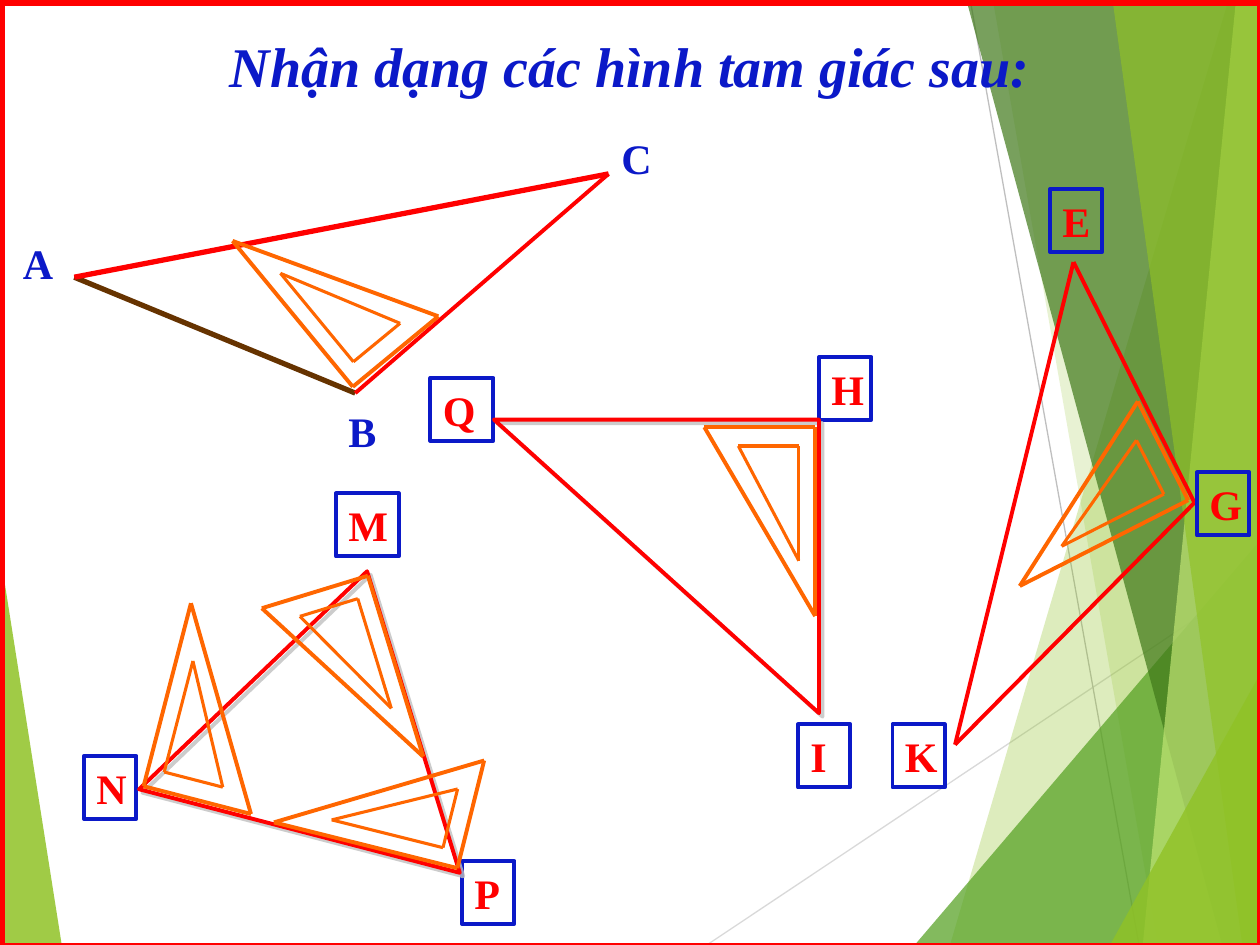
from math import cos, radians, sin

from lxml.etree import SubElement
from pptx import Presentation
from pptx.dml.color import RGBColor
from pptx.enum.shapes import MSO_CONNECTOR, MSO_SHAPE
from pptx.enum.text import MSO_ANCHOR, PP_ALIGN
from pptx.oxml.ns import qn
from pptx.util import Inches, Pt

W, H = 10, 7.5
CELL = 1 / 12  # labels sit on a grid of 120 columns by 90 rows
BLUE, RED, ORANGE, BROWN = "0B19C8", "FF0000", "FF6600", "663300"

# Polygon, colour, opacity in percent
LEFT_FACET = ([(0, 4.39), (0.49, H), (0, H)], "90C226", 85)
RIGHT_FACETS = [
    ([(9.75, 0), (7.54, H), (W, H), (W, 0)], "90C226", 30),
    ([(7.88, 0), (9.19, H), (W, H), (W, 0)], "90C226", 20),
    ([(7.26, H), (W, 4.29), (W, H)], "54A021", 72),
    ([(7.67, 0), (9.7, H), (W, H), (W, 0)], "3F7819", 70),
    ([(9.81, 0), (9.07, H), (W, H), (W, 0)], "C0E474", 70),
    ([(8.83, 0), (9.86, H), (W, H), (9.98, 0)], "90C226", 65),
    ([(8.81, H), (W, 5.35), (W, H)], "90C226", 80),
]


def rgb(color):
    return RGBColor.from_string(color)


def lengths(values):
    return [Inches(v) for v in values]


def set_line(s, color, width):
    s.line.color.rgb = rgb(color)
    s.line.width = Pt(width)


def add_line(shapes, start, end, color, width):
    s = shapes.add_connector(MSO_CONNECTOR.STRAIGHT, *lengths(start + end))
    set_line(s, color, width)
    SubElement(s._element.spPr, qn("a:effectLst"))


def add_facet(shapes, points, color, opacity):
    corners = [lengths(point) for point in points]
    builder = shapes.build_freeform(*corners[0])
    builder.add_line_segments(corners[1:], close=True)
    s = builder.convert_to_shape()
    s.shadow.inherit = False
    s.fill.solid()
    s.fill.fore_color.rgb = rgb(color)
    s.line.fill.background()
    clr = s._element.spPr.find(qn("a:solidFill"))[0]
    SubElement(clr, qn("a:alpha"), val=str(opacity * 1000))


def add_outline(shapes, kind, box, color, width, rotation=0):
    s = shapes.add_shape(kind, *lengths(box))
    s.shadow.inherit = False
    s.fill.background()
    set_line(s, color, width)
    s.rotation = rotation
    return s


def add_gray_shadow(s):
    effects = s._element.spPr.find(qn("a:effectLst"))
    shadow = SubElement(effects, qn("a:outerShdw"), dist=str(Pt(2.8)),
                        dir="2700000", algn="ctr", rotWithShape="0")
    clr = SubElement(shadow, qn("a:srgbClr"), val="C0C0C0")
    SubElement(clr, qn("a:alpha"), val="80000")


def write(s, text, size, color, italic=False, align=PP_ALIGN.LEFT):
    tf = s.text_frame
    tf.word_wrap = True
    tf.vertical_anchor = MSO_ANCHOR.TOP
    p = tf.paragraphs[0]
    p.alignment = align
    r = p.add_run()
    r.text = text
    font = {"name": "Times New Roman", "size": Pt(size), "bold": True,
            "italic": italic}
    for key, value in font.items():
        setattr(r.font, key, value)
    r.font.color.rgb = rgb(color)


def add_label(shapes, letter, col, row, cols=5, framed=True):
    box = [col * CELL, row * CELL, cols * CELL, 6 * CELL]
    if framed:
        s = add_outline(shapes, MSO_SHAPE.RECTANGLE, box, BLUE, 2.25)
    else:
        s = shapes.add_textbox(*lengths(box))
    write(s, letter, 24, RED if framed else BLUE)


def add_set_square(shapes, corner, angle):
    """Draw a set square by its right-angled corner and its short leg's angle."""
    a = radians(angle)

    def place(u, v):
        return (corner[0] + u * cos(a) + v * sin(a),
                corner[1] + u * sin(a) - v * cos(a))

    for u, v, short, long, width in ((0.13, 0.15, 0.48, 0.91, 1.75),
                                     (0, 0, 0.88, 1.5, 2.25)):
        tips = [place(u, v), place(u + short, v), place(u, v + long)]
        for i, tip in enumerate(tips):
            add_line(shapes, tips[i - 1], tip, ORANGE, width)


def background(shapes):
    add_facet(shapes, *LEFT_FACET)
    add_line(shapes, (5.61, H), (W, 4.57), "D9D9D9", 0.75)
    add_line(shapes, (7.7, 0), (9.04, H), "BFBFBF", 0.75)
    for facet in RIGHT_FACETS:
        add_facet(shapes, *facet)


def title(shapes, box):
    write(shapes.add_textbox(*lengths(box)),
          "Nhận dạng các hình tam giác sau:", 32, BLUE, True, PP_ALIGN.CENTER)


def triangle_abc(shapes):
    for letter, col, row, cols in (("A", 1, 22, 5), ("C", 58, 12, 5),
                                   ("B", 32, 38, 4)):
        add_label(shapes, letter, col, row, cols, framed=False)
    a, b, c = (0.59, 2.2), (2.82, 3.12), (4.83, 1.38)
    add_line(shapes, a, b, BROWN, 3)
    add_line(shapes, a, c, RED, 3)
    add_line(shapes, b, c, RED, 2.25)
    add_set_square(shapes, (2.8, 3.07), -39.5)


def triangle_mnp(shapes):
    add_label(shapes, "M", 32, 47, 6)
    add_label(shapes, "P", 44, 82)
    add_label(shapes, "N", 8, 72)
    add_gray_shadow(add_outline(shapes, MSO_SHAPE.ISOSCELES_TRIANGLE,
                                (1.33, 4.5, 2.63, 2.13), RED, 2.25, 14.6))
    for corner, angle in (((2.92, 4.57), 163), ((1.14, 6.24), 14.5),
                          ((3.63, 6.89), -76)):
        add_set_square(shapes, corner, angle)


def triangle_hqi(shapes):
    add_label(shapes, "H", 78, 34)
    add_label(shapes, "Q", 41, 36, 6)
    add_label(shapes, "I", 76, 69)
    add_gray_shadow(add_outline(shapes, MSO_SHAPE.RIGHT_TRIANGLE,
                                (3.92, 3.33, 2.58, 2.33), RED, 2.25, 180))
    add_set_square(shapes, (6.47, 3.39), 180)


def triangle_egk(shapes):
    e, g, k = (8.52, 2.08), (9.48, 3.99), (7.58, 5.91)
    for start, end in ((k, g), (k, e), (g, e)):
        add_line(shapes, start, end, RED, 2.25)
    for letter, col, row in (("K", 85, 69), ("E", 100, 18), ("G", 114, 45)):
        add_label(shapes, letter, col, row)
    add_set_square(shapes, (9.43, 3.97), -117)


def main():
    prs = Presentation()
    prs.slide_width, prs.slide_height = Inches(W), Inches(H)
    shapes = prs.slides.add_slide(prs.slide_layouts[6]).shapes
    background(shapes)
    title(shapes, (0, 0.2, W, 0.63))
    for figure in (triangle_abc, triangle_mnp, triangle_hqi, triangle_egk):
        figure(shapes)
    add_outline(shapes, MSO_SHAPE.RECTANGLE, (0.01, 0.02, W, H), RED, 4.5)
    prs.save("out.pptx")


if __name__ == "__main__":
    main()
